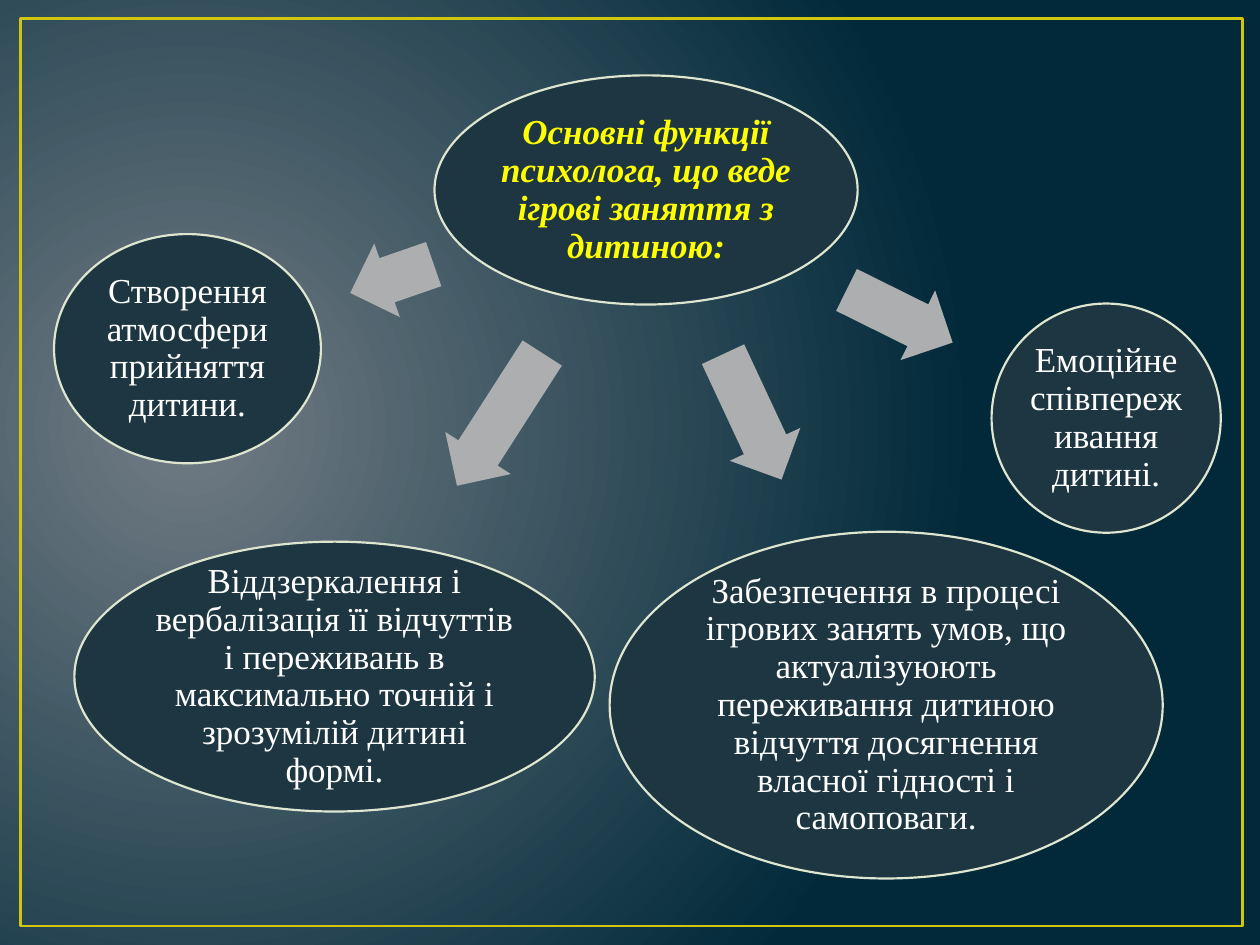
from pptx import Presentation
from pptx.dml.color import RGBColor
from pptx.enum.shapes import MSO_SHAPE
from pptx.enum.text import MSO_ANCHOR, PP_ALIGN
from pptx.oxml import parse_xml
from pptx.oxml.ns import nsdecls
from pptx.util import Cm, Pt

BUBBLE_FILL, BUBBLE_LINE = "1D3641", "DFE6D0"
ARROW_FILL, FRAME_LINE = "ACAEB0", "CFC60D"
BODY = {"name": "Times New Roman", "size": Pt(20), "bold": False, "italic": False}
TITLE = BODY | {"bold": True, "italic": True}

# Left, top, width, height in cm, relative to the diagram box
TITLE_BUBBLE = ((7.67, 0, 8.53, 4.62), "Основні функції психолога, що веде ігрові заняття з дитиною:")
FUNCTION_BUBBLES = [
    ((0, 3.2, 5.38, 4.62), "Створення атмосфери прийняття дитини."),
    ((18.9, 4.6, 4.62, 4.62), "Емоційне співпереживання дитині."),
    ((0.41, 9.4, 10.49, 5.44),
     "Віддзеркалення і вербалізація її відчуттів і переживань "
     "в максимально точній і зрозумілій дитині формі."),
    ((11.2, 9.2, 11.15, 6.99),
     "Забезпечення в процесі ігрових занять умов, що актуалізуюють переживання "
     "дитиною відчуття досягнення власної гідності і самоповаги."),
]
# Left, top, length in cm and rotation in degrees
ARROWS = [
    (5.92, 3.31, 1.78, 160.9),
    (15.85, 4.07, 2.39, 26.4),
    (7.39, 6.15, 3.18, 122.7),
    (12.68, 6.1, 2.79, 65),
]
ARROW_WIDTH = 1.57


def color(value):
    return RGBColor.from_string(value)


def add_plain_shape(page, kind, box, fill=None, line=None, line_width=1.25):
    shape = page.shapes.add_shape(kind, *(Cm(length) for length in box))
    shape.shadow.inherit = False
    if fill:
        shape.fill.solid()
        shape.fill.fore_color.rgb = color(fill)
    else:
        shape.fill.background()
    if line:
        shape.line.color.rgb = color(line)
        shape.line.width = Pt(line_width)
    else:
        shape.line.fill.background()
    return shape


def add_backdrop(page, box):
    # Radial gradient background
    fill = page.background.fill
    fill.gradient()
    for stop, position, value in zip(fill.gradient_stops, (0, 1), ("717C84", "01293A")):
        stop.position = position
        stop.color.rgb = color(value)
    gradient = page.element.xpath(".//p:bgPr/a:gradFill")[0]
    for linear in gradient.xpath("a:lin"):
        gradient.remove(linear)
    gradient.append(parse_xml(
        f'<a:path {nsdecls("a")} path="circle">'
        '<a:fillToRect l="15000" t="50000" r="85000" b="60000"/></a:path>'))
    # Thin frame
    add_plain_shape(page, MSO_SHAPE.RECTANGLE, box, line=FRAME_LINE, line_width=1.5)


def add_bubble(page, box, text, font_values, font_color):
    bubble = add_plain_shape(page, MSO_SHAPE.OVAL, box, BUBBLE_FILL, BUBBLE_LINE)
    frame = bubble.text_frame
    frame.word_wrap = True
    frame.vertical_anchor = MSO_ANCHOR.MIDDLE
    for side in ("left", "top", "right", "bottom"):
        setattr(frame, f"margin_{side}", Cm(0.08))
    para = frame.paragraphs[0]
    para.alignment = PP_ALIGN.CENTER
    para.line_spacing = 0.9
    span = para.add_run()
    span.text = text
    for name, value in font_values.items():
        setattr(span.font, name, value)
    span.font.color.rgb = color(font_color)


def add_diagram(page, left, top):
    def placed(box):
        return (left + box[0], top + box[1], *box[2:])

    # Central topic
    box, text = TITLE_BUBBLE
    add_bubble(page, placed(box), text, TITLE, "FFFF00")
    # Arrows and the functions they point to
    for (x, y, length, angle), (box, text) in zip(ARROWS, FUNCTION_BUBBLES):
        arrow = add_plain_shape(page, MSO_SHAPE.RIGHT_ARROW,
                                placed((x, y, length, ARROW_WIDTH)), ARROW_FILL)
        arrow.adjustments[0], arrow.adjustments[1] = 0.6, 0.5
        arrow.rotation = angle
        add_bubble(page, placed(box), text, BODY, "FFFFFF")


def main():
    deck = Presentation()
    deck.slide_width, deck.slide_height = Cm(25.4), Cm(19.05)
    page = deck.slides.add_slide(deck.slide_layouts[6])
    add_backdrop(page, (0.41, 0.38, 24.64, 18.29))
    add_diagram(page, 1.09, 1.52)
    deck.save("out.pptx")


if __name__ == "__main__":
    main()
